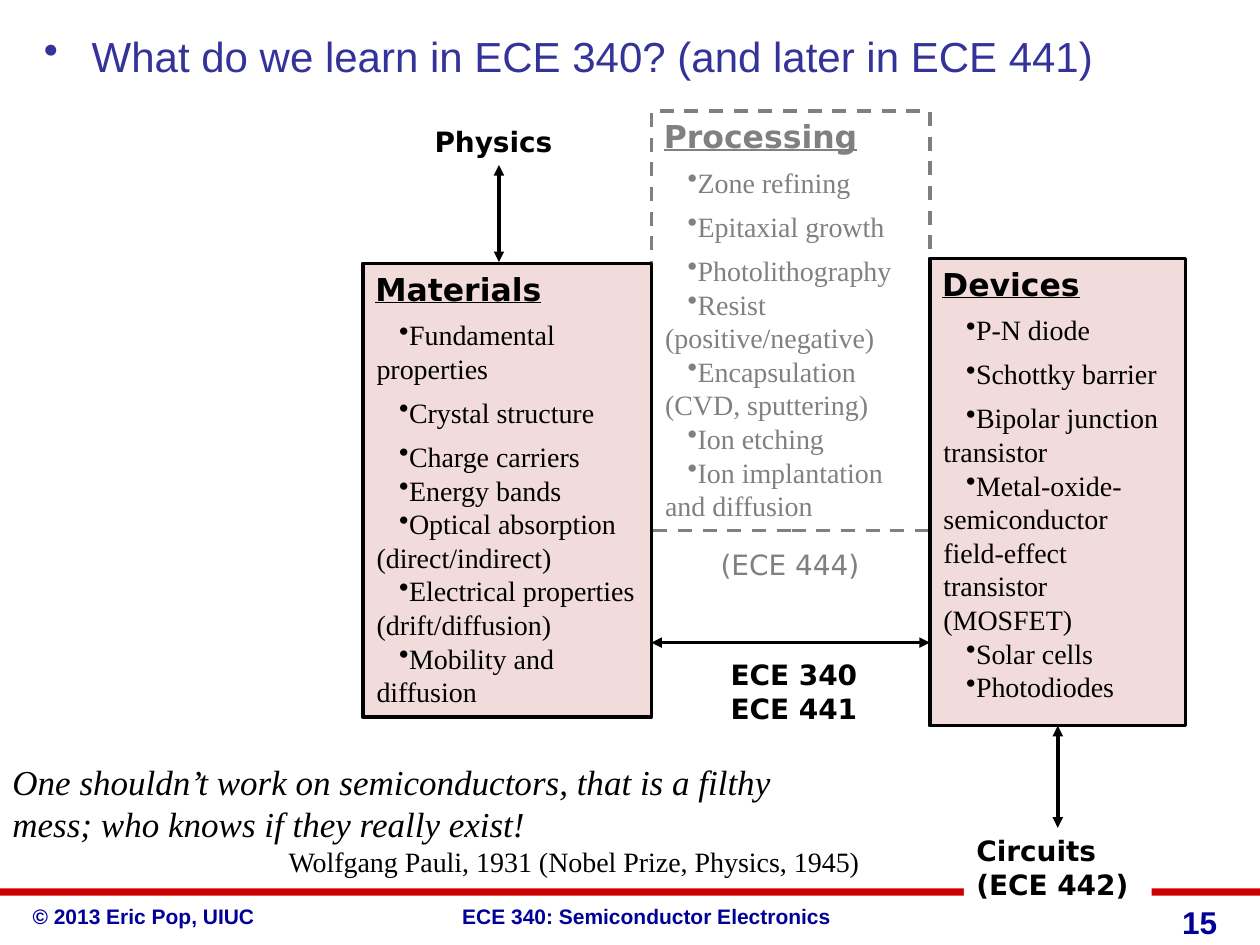
from pptx import Presentation
from pptx.dml.color import RGBColor
from pptx.enum.dml import MSO_LINE
from pptx.enum.shapes import MSO_CONNECTOR, MSO_SHAPE
from pptx.enum.text import MSO_ANCHOR, PP_ALIGN
from pptx.oxml.ns import qn
from pptx.util import Inches, Pt
from lxml import etree

RECT = MSO_SHAPE.RECTANGLE
STRAIGHT = MSO_CONNECTOR.STRAIGHT
DASH = MSO_LINE.DASH
TOP, MIDDLE = MSO_ANCHOR.TOP, MSO_ANCHOR.MIDDLE
LEFT, CENTER, RIGHT = PP_ALIGN.LEFT, PP_ALIGN.CENTER, PP_ALIGN.RIGHT

COLORS = {
    "black": "000000", "white": "FFFFFF", "grey": "808080", "dash": "7F7F7F",
    "pink": "F2DBDB", "red": "CC0000", "navy": "000099", "title": "333399",
}
SANS, SERIF, LABEL = "Arial", "Times New Roman", "DejaVu Sans"

PROCESSING = ["Zone refining", "Epitaxial growth", "Photolithography",
              "Resist (positive/negative)", "Encapsulation (CVD, sputtering)",
              "Ion etching", "Ion implantation and diffusion"]
DEVICES = ["P-N diode", "Schottky barrier", "Bipolar junction transistor",
           "Metal-oxide-semiconductor field-effect transistor (MOSFET)",
           "Solar cells", "Photodiodes"]
MATERIALS = ["Fundamental properties", "Crystal structure", "Charge carriers",
             "Energy bands", "Optical absorption (direct/indirect)",
             "Electrical properties (drift/diffusion)", "Mobility and diffusion"]


def rgb(name):
    return RGBColor.from_string(COLORS[name])


class SlideBuilder:
    """Holds the slide style and adds each kind of element to the current slide."""

    def __init__(self, prs):
        self.s = prs.slides.add_slide(prs.slide_layouts[6])
        self.line_width = Pt(2)

    def fill_paragraph(self, p, text, font, size, color, align=LEFT, after=0,
                       bullet=None, **fmt):
        if bullet:
            margin, indent = bullet
            pPr = p._p.get_or_add_pPr()
            pPr.set("marL", str(Inches(margin)))
            pPr.set("indent", str(Inches(indent)))
            etree.SubElement(pPr, qn("a:buChar")).set("char", "•")
        p.alignment = align
        p.space_after = Pt(after)
        r = p.add_run()
        r.text = text
        r.font.color.rgb = rgb(color)
        for name, value in {"name": font, "size": Pt(size), **fmt}.items():
            setattr(r.font, name, value)

    def text(self, at, text, font, size, color, wrap=True, margin=None, **fmt):
        tf = self.s.shapes.add_textbox(*map(Inches, at)).text_frame
        tf.word_wrap = wrap
        if margin is not None:
            for side in ("left", "top", "right", "bottom"):
                setattr(tf, f"margin_{side}", Inches(margin))
        self.fill_paragraph(tf.paragraphs[0], text, font, size, color, **fmt)
        return tf

    def rect(self, at, fill=None, line=None, dash=None):
        sp = self.s.shapes.add_shape(RECT, *map(Inches, at))
        sp.shadow.inherit = False
        if fill:
            sp.fill.solid()
            sp.fill.fore_color.rgb = rgb(fill)
        else:
            sp.fill.background()
        if line:
            sp.line.color.rgb = rgb(line)
            sp.line.width = self.line_width
            sp.line.dash_style = dash
        else:
            sp.line.fill.background()
        sp.text_frame.word_wrap = True
        sp.text_frame.vertical_anchor = TOP
        return sp

    def label(self, at, text, color="black", align=LEFT, bold=True):
        sp = self.rect(at, "white")
        self.fill_paragraph(sp.text_frame.paragraphs[0], text, LABEL, 16, color,
                            align, 10, bold=bold)
        return sp

    def topic(self, at, heading, items, color="black", **box):
        sp = self.rect(at, **box)
        tf = sp.text_frame
        self.fill_paragraph(tf.paragraphs[0], heading, LABEL, 18, color, after=6,
                            bold=True, underline=True)
        for i, item in enumerate(items):
            self.fill_paragraph(tf.add_paragraph(), item, SERIF, 16, color,
                                after=6 if i < 2 else 0, bullet=(0.01, 0.18))
        return sp

    def arrow(self, start, end, begin=None, finish=None):
        c = self.s.shapes.add_connector(STRAIGHT, *map(Inches, start + end))
        if begin:
            c.begin_connect(*begin)
        if finish:
            c.end_connect(*finish)
        c.line.color.rgb = rgb("black")
        c.line.width = self.line_width
        ln = c.line._get_or_add_ln()
        for tag in ("a:headEnd", "a:tailEnd"):
            etree.SubElement(ln, qn(tag)).set("type", "triangle")
        etree.SubElement(c._element.spPr, qn("a:effectLst"))


def main():
    prs = Presentation()
    prs.slide_width, prs.slide_height = Inches(10), Inches(7.5)
    b = SlideBuilder(prs)

    b.rect((0, 7.05, 10, 0.06), "red")
    footer = {"font": SANS, "color": "navy", "bold": True}
    b.text((0.16, 7.12, 1.98, 0.3), "© 2013 Eric Pop, UIUC", size=12, wrap=False, **footer)
    b.text((3.57, 7.12, 3.16, 0.3), "ECE 340: Semiconductor Electronics", size=12,
           wrap=False, **footer)
    b.text((9.08, 7.17, 0.58, 0.2), "15", size=18, margin=0, align=RIGHT, **footer)
    b.text((0.25, 0.19, 9, 0.55), "What do we learn in ECE 340? (and later in ECE 441)",
           SANS, 24, "title", after=6, bullet=(0.38, -0.38))

    b.label((5.4, 4.3, 1.74, 0.37), "(ECE 444)", "grey", CENTER, False)
    b.topic((5.17, 0.88, 2.21, 3.33), "Processing", PROCESSING, "grey",
            line="dash", dash=DASH)
    b.arrow((5.17, 5.1), (7.38, 5.1))
    b.label((5.7, 5.17, 1.22, 0.64), "ECE 340 ECE 441")
    devices = b.topic((7.38, 2.05, 2.03, 3.71), "Devices", DEVICES,
                      fill="pink", line="black")
    b.topic((2.88, 2.09, 2.29, 3.6), "Materials", MATERIALS, fill="pink", line="black")
    physics = b.label((3.35, 0.94, 1.22, 0.37), "Physics")
    b.arrow((3.96, 2.08), (3.96, 1.31), finish=(physics, 2))
    circuits = b.label((7.65, 6.57, 1.49, 0.64), "Circuits (ECE 442)")
    b.arrow((8.39, 6.55), (8.39, 5.76), begin=(circuits, 0), finish=(devices, 2))

    tf = b.text((0, 5.98, 6.92, 1.04),
                "One shouldn’t work on semiconductors, that is a filthy mess; "
                "who knows if they really exist!", SERIF, 20, "black", italic=True)
    tf.vertical_anchor = MIDDLE
    b.fill_paragraph(tf.add_paragraph(), "Wolfgang Pauli, 1931 (Nobel Prize, Physics, 1945)",
                     SERIF, 16, "black", RIGHT)
    prs.save("out.pptx")


if __name__ == "__main__":
    main()
